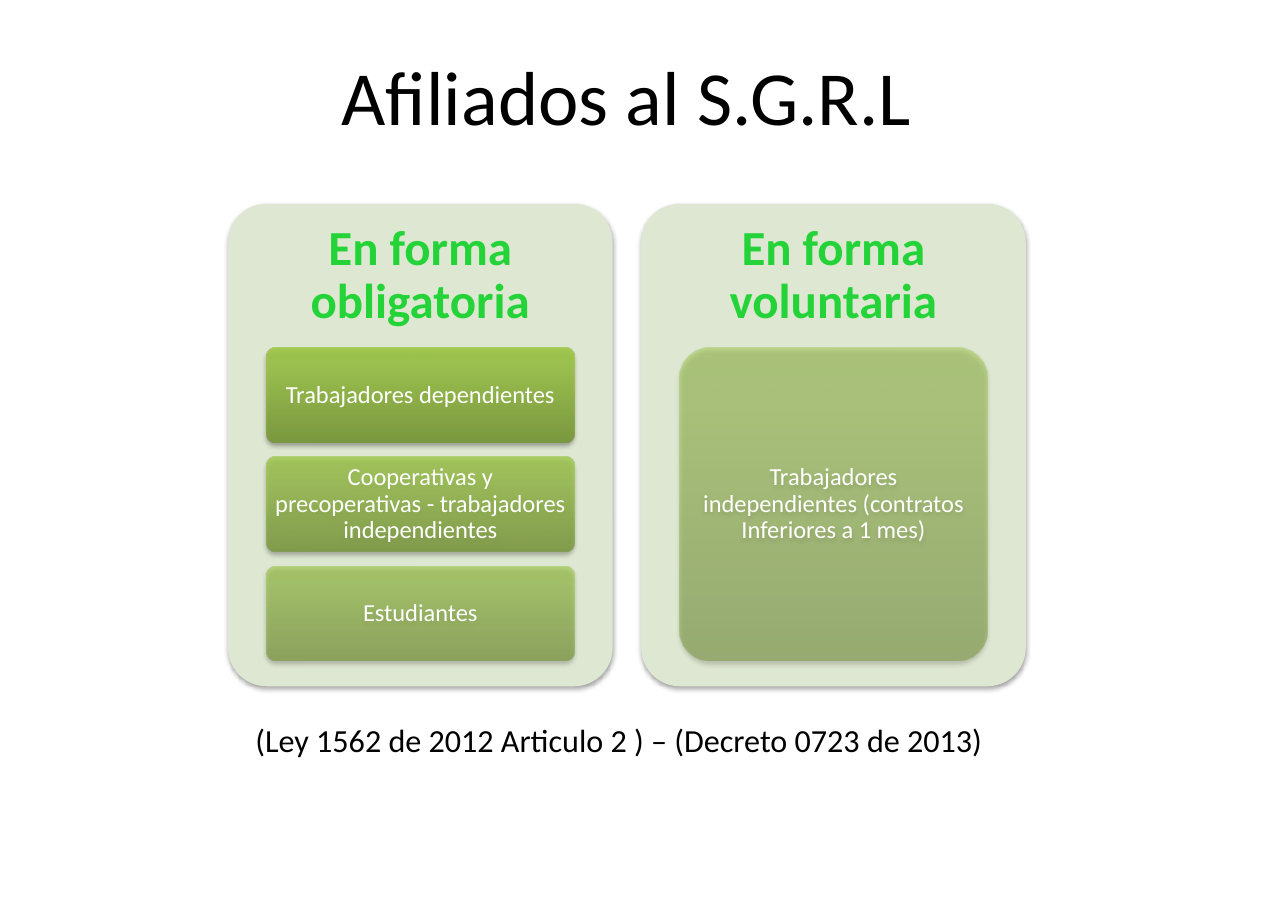
from dataclasses import dataclass

from lxml import etree
from pptx import Presentation
from pptx.dml.color import RGBColor
from pptx.enum.shapes import MSO_SHAPE
from pptx.enum.text import MSO_ANCHOR, MSO_AUTO_SIZE, PP_ALIGN
from pptx.oxml import parse_xml
from pptx.oxml.ns import nsdecls, qn
from pptx.util import Inches, Pt


@dataclass(frozen=True)
class Theme:
    font: str = "Calibri"
    black: str = "000000"
    white: str = "FFFFFF"
    panel: str = "DEE7D1"
    heading: str = "23D338"
    card_stops: tuple = ((0, "779737"), (80, "9BC348"), (100, "9DC746"))
    title_size: int = 50
    heading_size: int = 32
    card_size: int = 16
    source_size: int = 21


theme = Theme()


def add_rounded_box(slide, left, top, width, height):
    """Add a borderless rounded box with a soft shadow below it."""
    shape = slide.shapes.add_shape(
        MSO_SHAPE.ROUNDED_RECTANGLE, Inches(left), Inches(top), Inches(width), Inches(height))
    shape.adjustments[0] = 0.1
    shape.line.fill.background()
    shape.shadow.inherit = False
    effects = shape.element.spPr.find(qn("a:effectLst"))
    shadow = etree.SubElement(effects, qn("a:outerShdw"), blurRad=str(Pt(3.1)),
                              dist=str(Pt(1.8)), dir="5400000", rotWithShape="0")
    color = etree.SubElement(shadow, qn("a:srgbClr"), val=theme.black)
    etree.SubElement(color, qn("a:alpha"), val="35000")
    return shape


def write_text(shape, text, size, color, margins, align=PP_ALIGN.CENTER,
               anchor=MSO_ANCHOR.MIDDLE, spacing=0.9, bold=False):
    """Write one formatted run; margins are horizontal and vertical inches."""
    frame = shape.text_frame
    frame.word_wrap = True
    frame.auto_size = MSO_AUTO_SIZE.NONE
    frame.vertical_anchor = anchor
    frame.margin_left = frame.margin_right = Inches(margins[0])
    frame.margin_top = frame.margin_bottom = Inches(margins[1])
    paragraph = frame.paragraphs[0]
    paragraph.alignment = align
    paragraph.line_spacing = spacing
    run = paragraph.add_run()
    run.text = text
    run.font.name = theme.font
    run.font.size = Pt(size)
    run.font.bold = bold
    run.font.color.rgb = RGBColor.from_string(color)


presentation = Presentation()
presentation.slide_width = Inches(11.69)
presentation.slide_height = Inches(8.27)
slide = presentation.slides.add_slide(presentation.slide_layouts[5])

# Title
title = slide.shapes.title
title.left, title.top, title.width, title.height = (
    Inches(1.19), Inches(0.39), Inches(9), Inches(0.94))
write_text(title, "Afiliados al S.G.R.L", theme.title_size, theme.black, (0.1, 0.05), spacing=1)

# Panels: heading, then cards as (text, opacity in percent)
panels = [
    ("En forma obligatoria", [
        ("Trabajadores dependientes", 90),
        ("Cooperativas y precoperativas - trabajadores independientes", 77),
        ("Estudiantes", 63),
    ]),
    ("En forma voluntaria", [
        ("Trabajadores independientes (contratos Inferiores a 1 mes)", 50),
    ]),
]
panel_left, panel_top, panel_width, panel_height, panel_pitch = 2.07, 1.85, 3.49, 4.38, 3.75
heading_height = 1.31
card_inset, card_width, cards_height, card_gap = 0.35, 2.79, 2.84, 0.13

for column, (heading, cards) in enumerate(panels):
    left = panel_left + column * panel_pitch
    panel = add_rounded_box(slide, left, panel_top, panel_width, panel_height)
    panel.fill.solid()
    panel.fill.fore_color.rgb = RGBColor.from_string(theme.panel)

    heading_box = slide.shapes.add_textbox(
        Inches(left), Inches(panel_top), Inches(panel_width), Inches(heading_height))
    write_text(heading_box, heading, theme.heading_size, theme.heading, (0.13, 0.13), bold=True)

    # Cards share the height below the heading
    card_height = (cards_height - card_gap * (len(cards) - 1)) / len(cards)
    for row, (text, opacity) in enumerate(cards):
        top = panel_top + heading_height + row * (card_height + card_gap)
        card = add_rounded_box(slide, left + card_inset, top, card_width, card_height)
        stops = "".join(
            f'<a:gs pos="{position * 1000}"><a:srgbClr val="{color}">'
            f'<a:alpha val="{opacity * 1000}"/></a:srgbClr></a:gs>'
            for position, color in theme.card_stops)
        gradient = parse_xml(
            f'<a:gradFill {nsdecls("a")} rotWithShape="1"><a:gsLst>{stops}</a:gsLst>'
            '<a:lin ang="16200000" scaled="0"/></a:gradFill>')
        card.element.spPr.find(qn("a:prstGeom")).addnext(gradient)
        write_text(card, text, theme.card_size, theme.white, (0.04, 0.03))

# Legal source
source = slide.shapes.add_textbox(Inches(2.22), Inches(6.49), Inches(6.93), Inches(0.4))
write_text(source, "(Ley 1562 de 2012 Articulo 2 ) – (Decreto 0723 de 2013)",
           theme.source_size, theme.black, (0.1, 0.05), PP_ALIGN.LEFT, MSO_ANCHOR.TOP, 1)

presentation.save("out.pptx")
